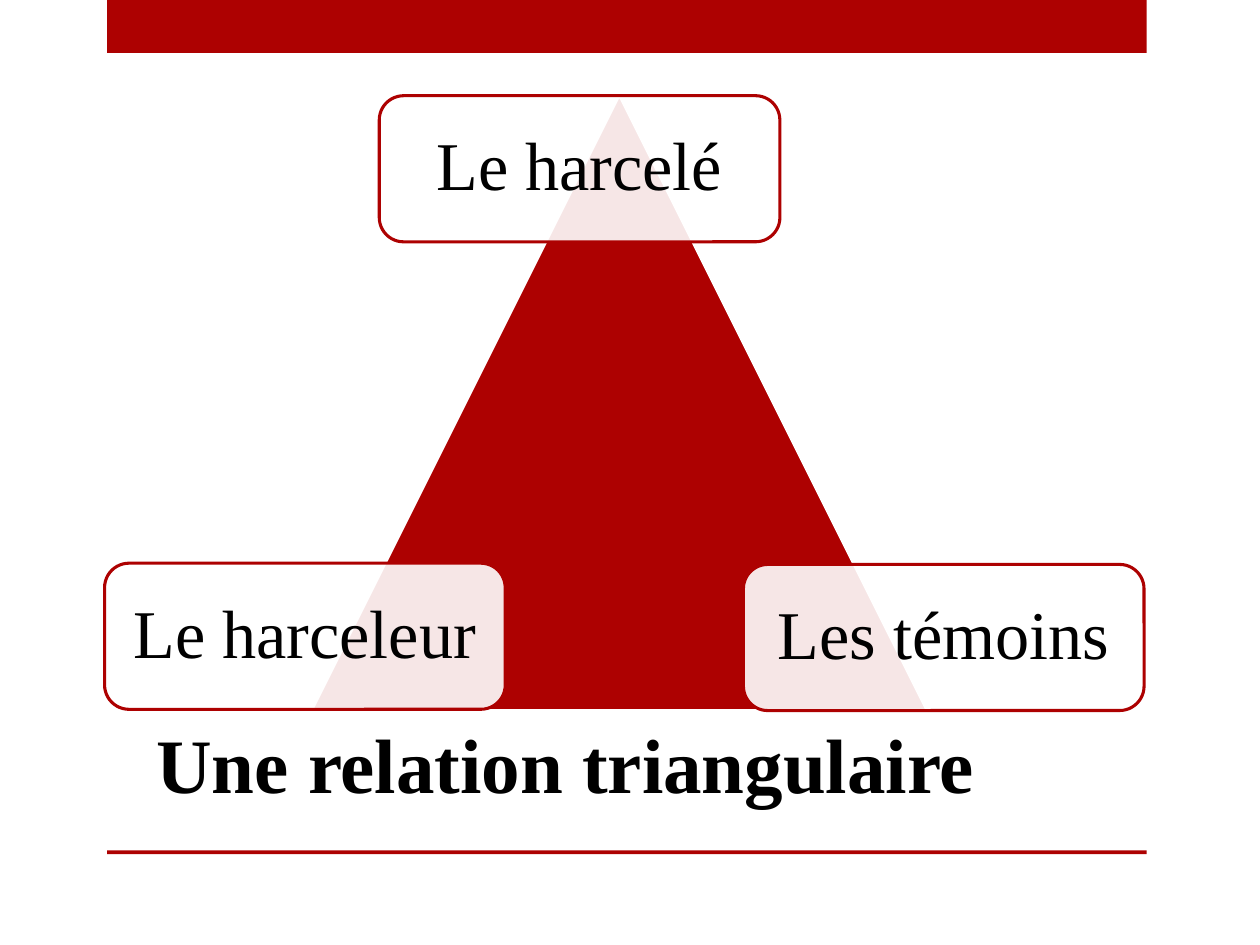
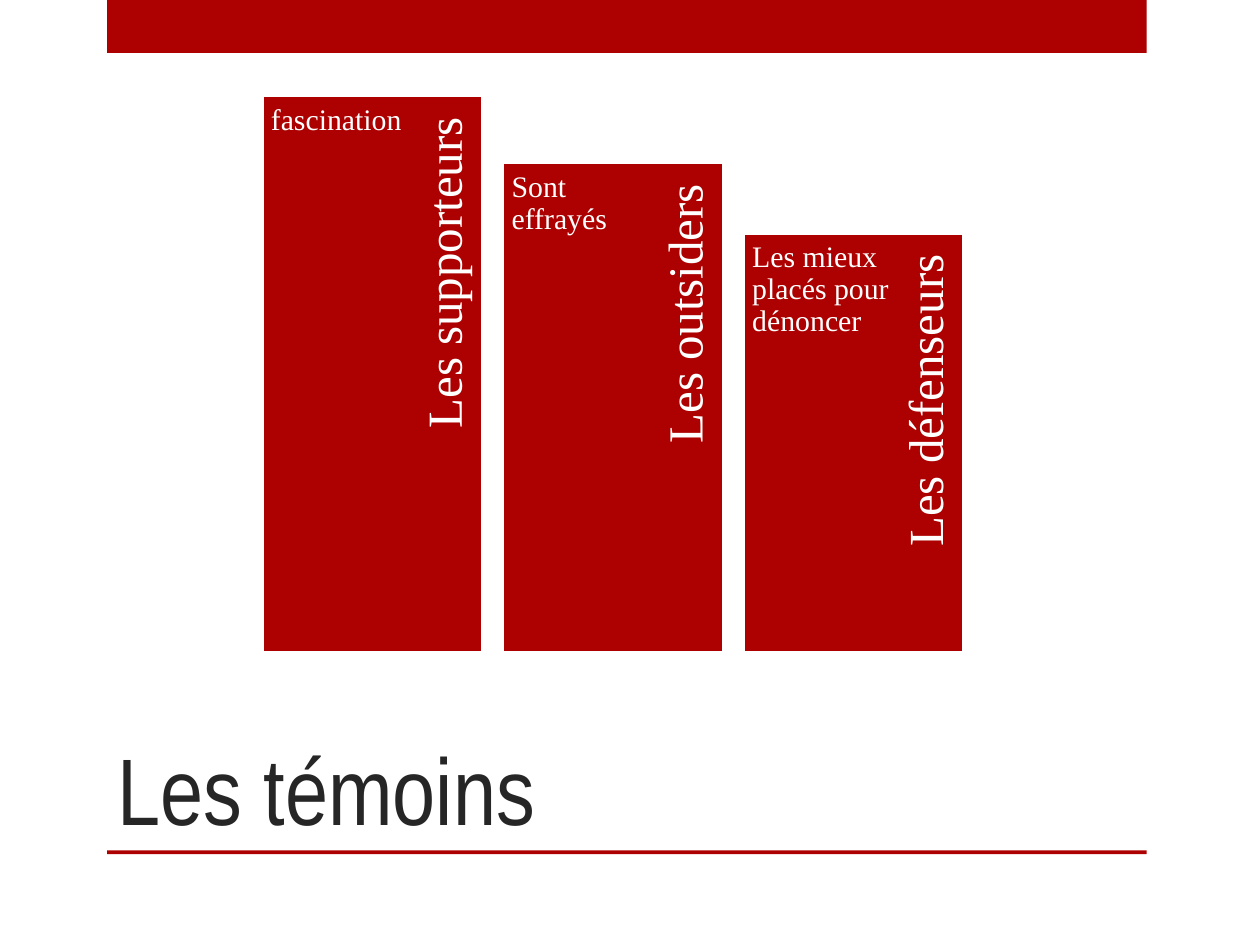
from dataclasses import dataclass

from lxml.etree import SubElement
from pptx import Presentation
from pptx.dml.color import RGBColor
from pptx.enum.shapes import MSO_SHAPE as Shape
from pptx.enum.text import MSO_ANCHOR as Anchor, MSO_AUTO_SIZE as AutoSize, PP_ALIGN as Align
from pptx.oxml.ns import qn
from pptx.util import Inches, Pt

COLUMNS, ROWS = 100, 75
SLIDE_WIDTH, SLIDE_HEIGHT = Inches(10), Inches(7.5)
RED, WHITE, BLACK, DARK = "AD0101", "FFFFFF", "000000", "262626"
SERIF, NARROW = "Times New Roman", "Arial Narrow"


@dataclass
class Box:
    """A rectangle in grid columns and rows."""
    left: float
    top: float
    width: float
    height: float

    def inner(self, left, top, width, height):
        """Return a box placed relative to this one's corner."""
        return Box(self.left + left, self.top + top, width, height)

    def lengths(self):
        """Return left, top, width and height in slide units."""
        column, row = SLIDE_WIDTH / COLUMNS, SLIDE_HEIGHT / ROWS
        return (round(self.left * column), round(self.top * row),
                round(self.width * column), round(self.height * row))


def colour(hex_value):
    """Turn a hex string into a colour."""
    return RGBColor.from_string(hex_value)


def add_figure(page, kind, box, fill, line=None, opacity=100):
    """Draw a filled preset shape without a shadow."""
    figure = page.shapes.add_shape(kind, *box.lengths())
    figure.shadow.inherit = False
    figure.fill.solid()
    figure.fill.fore_color.rgb = colour(fill)
    if opacity < 100:
        tint = figure.fill._xPr.find(qn("a:solidFill")).find(qn("a:srgbClr"))
        SubElement(tint, qn("a:alpha"), val=str(opacity * 1000))
    if line:
        figure.line.color.rgb = colour(line)
        figure.line.width = Pt(1.75)
    else:
        figure.line.fill.background()
    return figure


def write(holder, text, size, ink, font=SERIF, bold=False, align=Align.LEFT,
          anchor=Anchor.TOP, insets=(0.1, 0.05, 0.1, 0.05), spacing=0.9):
    """Write one formatted paragraph into a shape, with insets in inches."""
    frame = holder.text_frame
    frame.word_wrap = True
    frame.auto_size = AutoSize.NONE
    frame.vertical_anchor = anchor
    (frame.margin_left, frame.margin_top,
     frame.margin_right, frame.margin_bottom) = map(Inches, insets)
    para = frame.paragraphs[0]
    para.alignment = align
    para.line_spacing = spacing
    span = para.add_run()
    span.text = text
    span.font.name = font
    span.font.size = Pt(size)
    span.font.bold = bold
    span.font.color.rgb = colour(ink)


def add_page(deck, title, box, **style):
    """Add a slide with the red bands and its title."""
    page = deck.slides.add_slide(deck.slide_layouts[5])
    for top, height in ((0, 4.2), (67.5, 0.3)):
        add_figure(page, Shape.RECTANGLE, Box(8.5, top, 82.5, height), RED)
    heading = page.shapes.title
    heading.left, heading.top, heading.width, heading.height = box.lengths()
    write(heading, title, spacing=1.0, **style)
    return page


def add_triangle(page, box, roles):
    """Draw the triangle and a role card near each corner."""
    add_figure(page, Shape.ISOSCELES_TRIANGLE, box.inner(16.4, 0, 48.9, 48.9), RED, WHITE)
    for role, left, top in roles:
        card = add_figure(page, Shape.ROUNDED_RECTANGLE,
                          box.inner(left, top, 31.8, 11.6), WHITE, RED, opacity=90)
        write(card, role, 39, BLACK, align=Align.CENTER, anchor=Anchor.MIDDLE,
              insets=(0.1, 0.16, 0.1, 0.16))


def add_witness(page, box, label, note):
    """Draw one column with its note and its upright label."""
    column = add_figure(page, Shape.RECTANGLE, box, RED, WHITE)
    write(column, note, 17, WHITE, insets=(0.07, 0.07, 0.58, 0.07))
    length, thickness, centre = box.height * 0.9, 4.6, 14.8
    strip = box.inner(centre - length / 2, (length - thickness) / 2, length, thickness)
    upright = page.shapes.add_textbox(*strip.lengths())
    upright.rotation = 270
    write(upright, label, 28, WHITE, align=Align.RIGHT, anchor=Anchor.MIDDLE,
          insets=(0.12, 0, 0.17, 0.04))


def add_witnesses(page, box, witnesses):
    """Stand the columns side by side on the bottom of the box."""
    width = 17.5
    pitch = (box.width - width) / (len(witnesses) - 1)
    for place, (label, note, height) in enumerate(witnesses):
        column = box.inner(place * pitch, box.height - height, width, height)
        add_witness(page, column, label, note)


def main():
    """Build and save the deck."""
    deck = Presentation()
    deck.slide_width, deck.slide_height = SLIDE_WIDTH, SLIDE_HEIGHT

    relation = add_page(deck, "Une relation triangulaire", Box(11.4, 56.4, 78.7, 8.4),
                        size=44, ink=BLACK, bold=True)
    add_triangle(relation, Box(8.3, 7.5, 82.5, 48.9), (
        ("Le harcelé", 21.8, 0.1),
        ("Le harceleur", 0, 37.2),
        ("Les témoins", 50.7, 37.3),
    ))

    witnesses = add_page(deck, "Les témoins", Box(8.3, 50, 74.2, 17.5),
                         size=54, ink=DARK, font=NARROW, anchor=Anchor.BOTTOM)
    add_witnesses(witnesses, Box(20.8, 7.6, 55.7, 44.2), (
        ("Les supporteurs", "fascination", 44.2),
        ("Les outsiders", "Sont effrayés", 38.9),
        ("Les défenseurs", "Les mieux placés pour dénoncer", 33.3),
    ))
    deck.save("out.pptx")


if __name__ == "__main__":
    main()
